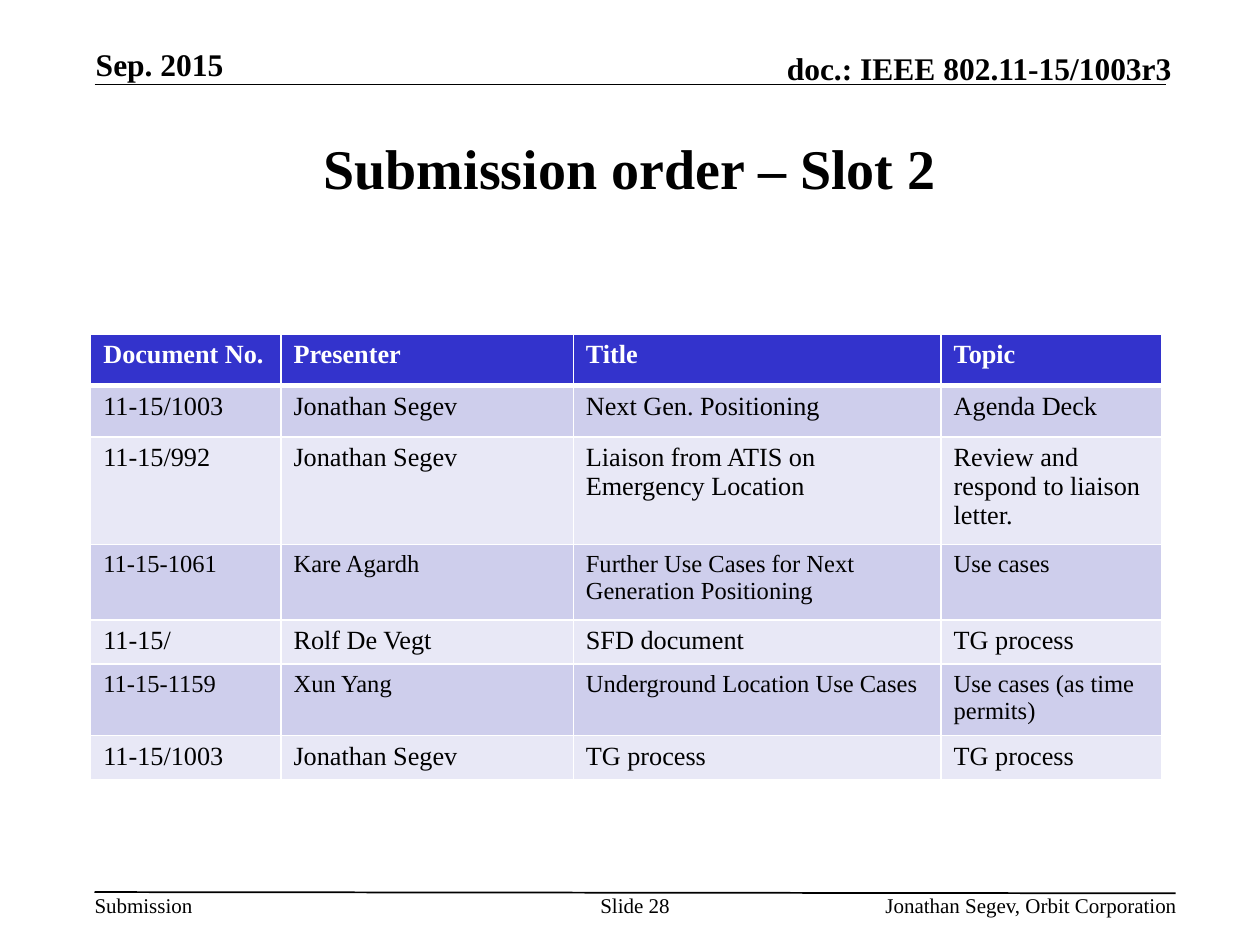
"""Build the submission order slide with its document header, table and footer."""
from typing import NamedTuple

from lxml.etree import SubElement
from pptx import Presentation
from pptx.dml.color import RGBColor
from pptx.enum.shapes import MSO_CONNECTOR
from pptx.enum.text import MSO_ANCHOR as Anchor, PP_ALIGN as Align
from pptx.oxml import parse_xml
from pptx.oxml.ns import nsdecls, qn
from pptx.util import Emu, Pt

EMU_PER_PX = 9144
FONT = "Times New Roman"
BLACK, WHITE, HEADER = "000000", "FFFFFF", "3333CC"
BANDS = ("CECEEC", "E8E8F6")


class Label(NamedTuple):
    text: str
    box: tuple[int, int, int, int]
    size: int
    bold: bool = False
    align: Align = Align.LEFT
    anchor: Anchor = Anchor.TOP
    inset: tuple[int, int] = (0, 0)
    wrap: bool = True


class Rule(NamedTuple):
    x1: int
    y1: int
    x2: int
    y2: int


class Row(NamedTuple):
    height: int
    size: int
    texts: tuple[str, ...]


RULES = (Rule(75, 67, 925, 67), Rule(75, 708, 933, 709))
LABELS = (
    Label("Submission", (75, 708, 78, 20), 12, wrap=False),
    Label("doc.: IEEE 802.11-15/1003r3", (547, 39, 383, 30), 18, True, Align.RIGHT, Anchor.BOTTOM),
    Label("Submission order – Slot 2", (75, 75, 850, 116), 32, True, Align.CENTER, Anchor.MIDDLE, (10, 5)),
    Label("Slide 28", (475, 708, 58, 40), 12, align=Align.CENTER),
    Label("Jonathan Segev, Orbit Corporation", (586, 708, 348, 20), 12, align=Align.RIGHT),
    Label("Sep. 2015", (76, 36, 205, 30), 18, True, anchor=Anchor.BOTTOM),
)
TABLE_BOX = (72, 265, 850, 353)
COLUMNS = (151, 232, 292, 175)
ROWS = (
    Row(41, 15, ("Document No.", "Presenter", "Title", "Topic")),
    Row(41, 15, ("11-15/1003", "Jonathan Segev", "Next Gen. Positioning", "Agenda Deck")),
    Row(44, 15, ("11-15/992", "Jonathan Segev", "Liaison from ATIS on Emergency Location",
                 "Review and respond to liaison letter.")),
    Row(60, 14, ("11-15-1061", "Kare Agardh", "Further Use Cases for Next Generation Positioning",
                 "Use cases")),
    Row(30, 15, ("11-15/", "Rolf De Vegt", "SFD document", "TG process")),
    Row(17, 14, ("11-15-1159", "Xun Yang", "Underground Location Use Cases",
                 "Use cases (as time permits)")),
    Row(17, 15, ("11-15/1003", "Jonathan Segev", "TG process", "TG process")),
)


def px(n: int) -> Emu:
    return Emu(n * EMU_PER_PX)


def rgb(code: str) -> RGBColor:
    return RGBColor.from_string(code)


def style(p, size: int, bold: bool, color: str) -> None:
    p.font.name, p.font.size, p.font.bold = FONT, Pt(size), bold
    p.font.color.rgb = rgb(color)


def draw_rule(slide, rule: Rule) -> None:
    line = slide.shapes.add_connector(MSO_CONNECTOR.STRAIGHT, *map(px, rule))
    line.line.color.rgb = rgb(BLACK)
    line.line.width = Pt(1)
    SubElement(line._element.spPr, qn("a:effectLst"))


def draw_label(slide, label: Label) -> None:
    tf = slide.shapes.add_textbox(*map(px, label.box)).text_frame
    tf.word_wrap = label.wrap
    tf.vertical_anchor = label.anchor
    tf.margin_left = tf.margin_right = px(label.inset[0])
    tf.margin_top = tf.margin_bottom = px(label.inset[1])
    p = tf.paragraphs[0]
    p.text, p.alignment = label.text, label.align
    style(p, label.size, label.bold, BLACK)


def set_borders(cell, top: int, bottom: int) -> None:
    tc_pr = cell._tc.get_or_add_tcPr()
    for i, (side, width) in enumerate((("L", 1), ("R", 1), ("T", top), ("B", bottom))):
        tc_pr.insert(i, parse_xml(
            f'<a:ln{side} {nsdecls("a")} w="{Pt(width)}"><a:solidFill>'
            f'<a:srgbClr val="{WHITE}"/></a:solidFill></a:ln{side}>'))


def draw_table(slide, rows: tuple[Row, ...]) -> None:
    frame = slide.shapes.add_table(len(rows), len(COLUMNS), *map(px, TABLE_BOX))
    table = frame.table
    for column, width in zip(table.columns, COLUMNS):
        column.width = px(width)
    for i, row in enumerate(rows):
        table.rows[i].height = px(row.height)
        head = i == 0
        for cell, text in zip(table.rows[i].cells, row.texts):
            cell.text = text
            cell.margin_left = cell.margin_right = px(10)
            cell.margin_top = cell.margin_bottom = px(5)
            cell.fill.solid()
            cell.fill.fore_color.rgb = rgb(HEADER if head else BANDS[(i - 1) % 2])
            style(cell.text_frame.paragraphs[0], row.size, head, WHITE if head else BLACK)
            set_borders(cell, 3 if i == 1 else 1, 3 if head else 1)
    frame.height = px(TABLE_BOX[3])


def main() -> None:
    prs = Presentation()
    prs.slide_width, prs.slide_height = px(1000), px(750)
    slide = prs.slides.add_slide(prs.slide_layouts[6])
    for rule in RULES:
        draw_rule(slide, rule)
    for label in LABELS:
        draw_label(slide, label)
    draw_table(slide, ROWS)
    prs.save("out.pptx")


if __name__ == "__main__":
    main()
